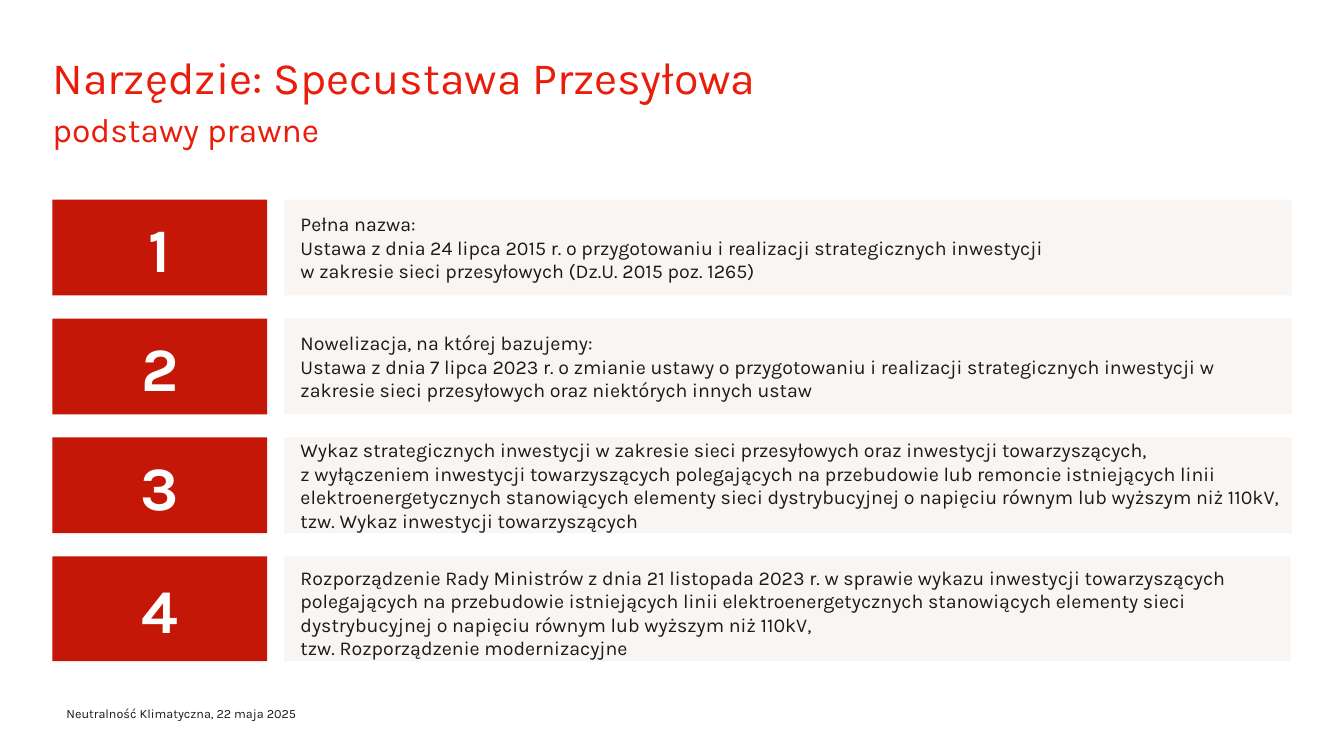
from pptx import Presentation
from pptx.dml.color import RGBColor
from pptx.enum.shapes import MSO_SHAPE
from pptx.enum.text import MSO_ANCHOR, PP_ALIGN
from pptx.util import Inches, Pt

RED = RGBColor(0xC4, 0x17, 0x08)
TITLE_RED = RGBColor(0xEA, 0x1C, 0x0A)
SAND = RGBColor(0xF8, 0xF5, 0xF2)
INK = RGBColor(0x1A, 0x1A, 0x1A)
WHITE = RGBColor(0xFF, 0xFF, 0xFF)

LEFT = 0.52
FIRST_ROW_TOP = 1.98
ROW_STEP = 1.18

LEGAL_BASES = [
    (0.95, 9.99, (0.16, 0.08, 0.08, 0.08), [
        "Pełna nazwa:",
        "Ustawa z dnia 24 lipca 2015 r. o przygotowaniu i realizacji strategicznych inwestycji",
        "w zakresie sieci przesyłowych (Dz.U. 2015 poz. 1265)",
    ]),
    (0.95, 9.99, (0.16, 0.08, 0.08, 0.08), [
        "Nowelizacja, na której bazujemy:",
        "Ustawa z dnia 7 lipca 2023 r. o zmianie ustawy o przygotowaniu i realizacji "
        "strategicznych inwestycji w zakresie sieci przesyłowych oraz niektórych innych ustaw",
    ]),
    (0.95, 9.99, (0.16, 0.08, 0, 0.08), [
        "Wykaz strategicznych inwestycji w zakresie sieci przesyłowych oraz inwestycji "
        "towarzyszących,",
        "z wyłączeniem inwestycji towarzyszących polegających na przebudowie lub remoncie "
        "istniejących linii elektroenergetycznych stanowiących elementy sieci dystrybucyjnej "
        "o napięciu równym lub wyższym niż 110kV, tzw. Wykaz inwestycji towarzyszących",
    ]),
    (1.04, 9.98, (0.16, 0.08, 0, 0), [
        "Rozporządzenie Rady Ministrów z dnia 21 listopada 2023 r. w sprawie wykazu inwestycji "
        "towarzyszących polegających na przebudowie istniejących linii elektroenergetycznych "
        "stanowiących elementy sieci dystrybucyjnej o napięciu równym lub wyższym niż 110kV,",
        "tzw. Rozporządzenie modernizacyjne",
    ]),
]


def write(para, text, font="Karla", size=14, color=INK, bold=False,
          align=PP_ALIGN.LEFT, line_spacing=None):
    """Add one formatted span of text to a paragraph."""
    para.alignment = align
    if line_spacing:
        para.line_spacing = Pt(line_spacing)
    span = para.add_run()
    span.text = text
    span.font.name = font
    span.font.size = Pt(size)
    span.font.color.rgb = color
    span.font.bold = bold


class SlideBuilder:
    """Hold the current page and its font, and draw each kind of element."""

    def __init__(self, page, font="Karla"):
        """Remember the page and the font."""
        self.page = page
        self.font = font

    def fill_frame(self, box, lines, insets, anchor):
        """Lay out text lines, each a text with its format, inside a box."""
        frame = box.text_frame
        frame.word_wrap = True
        frame.vertical_anchor = anchor
        (frame.margin_left, frame.margin_top,
         frame.margin_right, frame.margin_bottom) = map(Inches, insets)
        for index, (text, style) in enumerate(lines):
            para = frame.add_paragraph() if index else frame.paragraphs[0]
            write(para, text, font=self.font, **style)

    def panel(self, place, color, lines, insets=(0.08, 0.08, 0.08, 0.08)):
        """Draw a filled square-cornered panel with centred-height text."""
        box = self.page.shapes.add_shape(MSO_SHAPE.ROUNDED_RECTANGLE, *map(Inches, place))
        box.adjustments[0] = 0
        box.shadow.inherit = False
        box.fill.solid()
        box.fill.fore_color.rgb = color
        box.line.fill.background()
        self.fill_frame(box, lines, insets, MSO_ANCHOR.MIDDLE)

    def label(self, place, lines):
        """Draw a plain text box without margins."""
        box = self.page.shapes.add_textbox(*map(Inches, place))
        self.fill_frame(box, lines, (0, 0, 0, 0), MSO_ANCHOR.TOP)


def main():
    """Build the slide and save the deck."""
    deck = Presentation()
    deck.slide_width, deck.slide_height = Inches(13.33), Inches(7.5)
    builder = SlideBuilder(deck.slides.add_slide(deck.slide_layouts[6]))

    number_style = dict(size=44, color=WHITE, bold=True, align=PP_ALIGN.CENTER)
    for index, (height, width, insets, texts) in enumerate(LEGAL_BASES):
        top = FIRST_ROW_TOP + index * ROW_STEP
        builder.panel((LEFT, top, 2.13, height), RED, [(str(index + 1), number_style)])
        builder.panel((2.82, top, width, height), SAND, [(text, {}) for text in texts], insets)

    title_style = dict(color=TITLE_RED, line_spacing=33.3)
    builder.label((LEFT, 0.56, 12.28, 0.97), [
        ("Narzędzie: Specustawa Przesyłowa", dict(size=32, **title_style)),
        ("podstawy prawne", dict(size=24, **title_style)),
    ])
    builder.label((0.66, 7, 5.94, 0.15),
                  [("Neutralność Klimatyczna, 22 maja 2025", dict(size=9))])
    deck.save("out.pptx")


if __name__ == "__main__":
    main()
